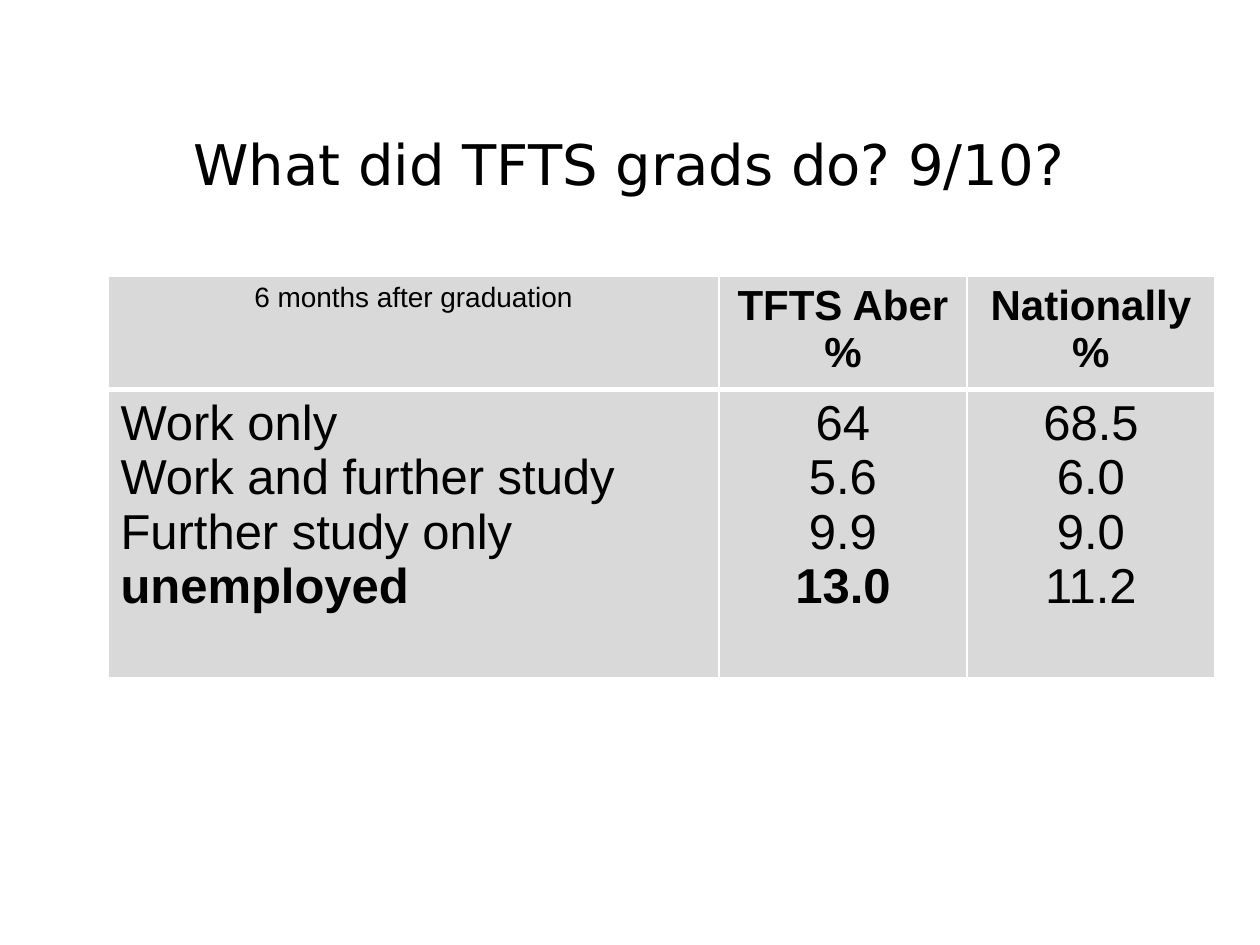
from lxml.etree import SubElement
from pptx import Presentation
from pptx.dml.color import RGBColor
from pptx.enum.text import MSO_ANCHOR, PP_ALIGN
from pptx.oxml.ns import qn
from pptx.util import Pt

PX = 914400 / 126
BLACK, WHITE, GREY = "000000", "FFFFFF", "D9D9D9"
HEADINGS = [("6 months after graduation", 16, False),
            ("TFTS Aber %", 24, True),
            ("Nationally %", 24, True)]
OUTCOMES = [["Work only", "Work and further study", "Further study only", "unemployed"],
            ["64", "5.6", "9.9", "13.0"],
            ["68.5", "6.0", "9.0", "11.2"]]
BOLD_OUTCOMES = {"unemployed", "13.0"}
COLUMN_WIDTHS = [611, 248, 248]
ROW_HEIGHTS = [106, 288]


def px(length):
    return round(length * PX)


def color(hex_code):
    return RGBColor.from_string(hex_code)


def write(frame, lines, size, font="Arial", bold=(), align=PP_ALIGN.CENTER):
    """Fill a text frame with one paragraph per line; lines in bold are set bold."""
    for index, line in enumerate(lines):
        paragraph = frame.paragraphs[0] if index == 0 else frame.add_paragraph()
        paragraph.alignment = align
        run = paragraph.add_run()
        run.text = line
        run.font.size = Pt(size)
        run.font.name = font
        run.font.bold = line in bold
        run.font.color.rgb = color(BLACK)


def style_cell(cell, top, bottom):
    """Give a cell white borders, with top and bottom widths in points, and a grey fill."""
    properties = cell._tc.get_or_add_tcPr()
    for side, width in (("L", 1), ("R", 1), ("T", top), ("B", bottom)):
        border = SubElement(properties, qn(f"a:ln{side}"), w=str(Pt(width)))
        fill = SubElement(border, qn("a:solidFill"))
        SubElement(fill, qn("a:srgbClr"), val=WHITE)
    cell.fill.solid()
    cell.fill.fore_color.rgb = color(GREY)


def add_title(slide, left, top, width, height):
    frame = slide.shapes.add_textbox(px(left), px(top), px(width), px(height)).text_frame
    frame.word_wrap = True
    frame.vertical_anchor = MSO_ANCHOR.MIDDLE
    write(frame, ["What did TFTS grads do? 9/10?"], 32, font="DejaVu Sans")


def add_outcomes_table(slide, left, top):
    table = slide.shapes.add_table(
        len(ROW_HEIGHTS), len(COLUMN_WIDTHS), px(left), px(top),
        px(sum(COLUMN_WIDTHS)), px(sum(ROW_HEIGHTS))).table
    for row, height in zip(table.rows, ROW_HEIGHTS):
        row.height = px(height)
    for index, width in enumerate(COLUMN_WIDTHS):
        table.columns[index].width = px(width)
        heading_cell, outcome_cell = table.cell(0, index), table.cell(1, index)
        heading, size, is_bold = HEADINGS[index]
        write(heading_cell.text_frame, [heading], size, bold={heading} if is_bold else ())
        write(outcome_cell.text_frame, OUTCOMES[index], 28, bold=BOLD_OUTCOMES,
              align=PP_ALIGN.CENTER if index else PP_ALIGN.LEFT)
        style_cell(heading_cell, top=1, bottom=3)
        style_cell(outcome_cell, top=3, bottom=1)


def main():
    presentation = Presentation()
    presentation.slide_width, presentation.slide_height = px(1260), px(945)
    slide = presentation.slides.add_slide(presentation.slide_layouts[6])
    add_title(slide, 94, 84, 1071, 158)
    add_outcomes_table(slide, 108, 276)
    presentation.save("out.pptx")


if __name__ == "__main__":
    main()
